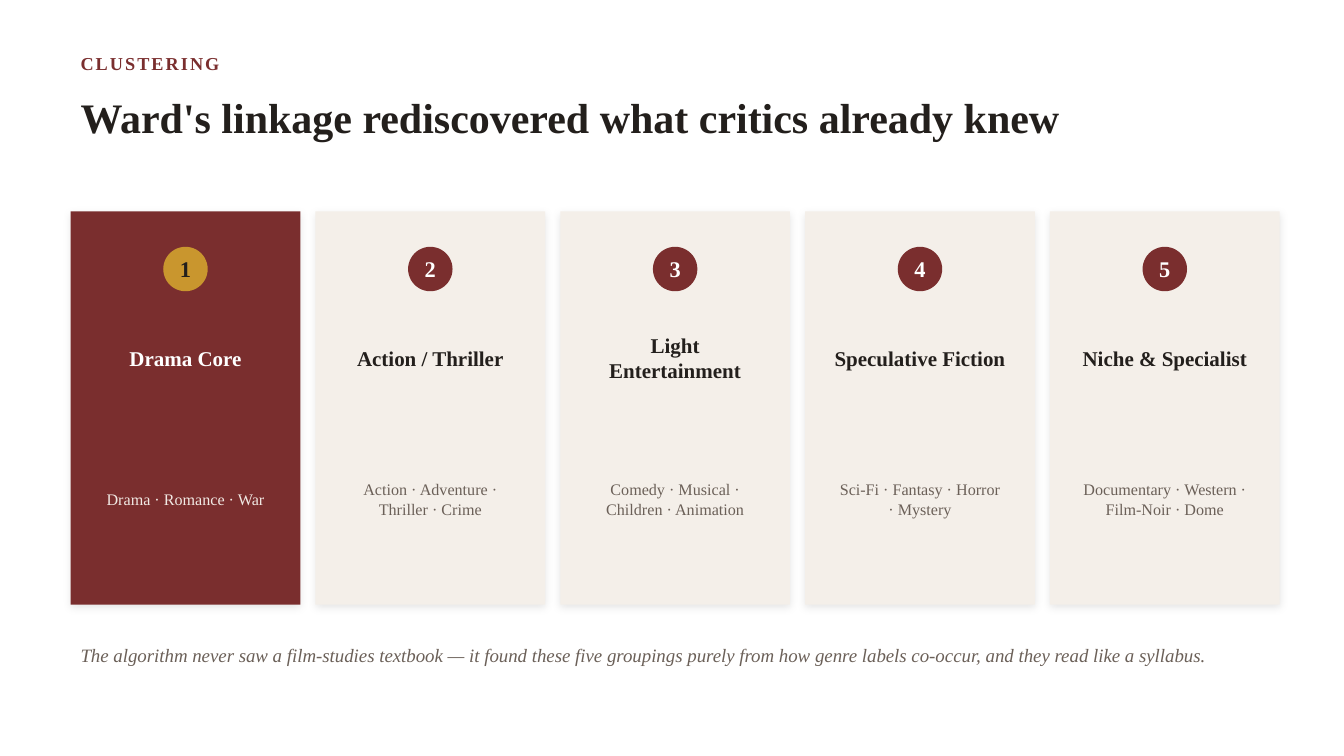
"""Build the slide on five genre clusters found by Ward's linkage."""
from lxml import etree
from pptx import Presentation
from pptx.dml.color import RGBColor
from pptx.enum.shapes import MSO_SHAPE
from pptx.enum.text import MSO_ANCHOR, PP_ALIGN
from pptx.oxml.ns import qn
from pptx.util import Cm, Pt

RECT, OVAL = MSO_SHAPE.RECTANGLE, MSO_SHAPE.OVAL
LEFT, CENTER = PP_ALIGN.LEFT, PP_ALIGN.CENTER
MIDDLE = MSO_ANCHOR.MIDDLE
FONT = "Times New Roman"
COLORS = {"wine": "7A2E2E", "gold": "C9962E", "cream": "F4EFE9", "ink": "231F1C",
          "gray": "6B6058", "blush": "F1E9E4", "white": "FFFFFF"}
EDGE, TOP, WIDE, HIGH, STEP, DOT = 1.78, 5.33, 5.79, 9.91, 6.17, 1.12
GROUPS = [
    ("Drama Core", "Drama · Romance · War"),
    ("Action / Thriller", "Action · Adventure · Thriller · Crime"),
    ("Light Entertainment", "Comedy · Musical · Children · Animation"),
    ("Speculative Fiction", "Sci-Fi · Fantasy · Horror · Mystery"),
    ("Niche & Specialist", "Documentary · Western · Film-Noir · Dome"),
]


def paint(name):
    """Return the named colour."""
    return RGBColor.from_string(COLORS[name])


def write(shape, text, size, color, align=LEFT, bold=False, italic=False):
    """Put one styled paragraph in a shape and return its run."""
    frame = shape.text_frame
    frame.text = text
    frame.word_wrap = True
    frame.vertical_anchor = MIDDLE
    para = frame.paragraphs[0]
    para.alignment = align
    run = para.runs[0]
    font = run.font
    font.name, font.size = FONT, Pt(size)
    font.bold, font.italic = bold, italic
    font.color.rgb = paint(color)
    return run


def add_text(slide, box, *args, **style):
    """Add a text box and return its run."""
    shape = slide.shapes.add_textbox(*map(Cm, box))
    return write(shape, *args, **style)


def add_shape(slide, kind, box, color):
    """Add a plain filled shape."""
    shape = slide.shapes.add_shape(kind, *map(Cm, box))
    shape.shadow.inherit = False
    shape.fill.solid()
    shape.fill.fore_color.rgb = paint(color)
    shape.line.fill.background()
    return shape


def add_shade(shape):
    """Give a shape a soft shadow below it."""
    effects = shape._element.spPr.find(qn("a:effectLst"))
    shade = etree.SubElement(effects, qn("a:outerShdw"), blurRad=str(Pt(6)),
                             dist=str(Pt(2)), dir="5400000", algn="bl", rotWithShape="0")
    tint = etree.SubElement(shade, qn("a:srgbClr"), val="000000")
    etree.SubElement(tint, qn("a:alpha"), val="10000")


def add_card(slide, index, title, genres):
    """Add one cluster card, the first one in strong colours."""
    first = index == 0
    left = EDGE + index * STEP
    card = add_shape(slide, RECT, (left, TOP, WIDE, HIGH), "wine" if first else "cream")
    add_shade(card)
    dot = add_shape(slide, OVAL, (left + (WIDE - DOT) / 2, 6.22, DOT, DOT),
                    "gold" if first else "wine")
    frame = dot.text_frame
    frame.margin_left = frame.margin_right = frame.margin_top = frame.margin_bottom = 0
    write(dot, str(index + 1), 16, "ink" if first else "white", CENTER, bold=True)
    add_text(slide, (left + 0.38, 7.87, WIDE - 0.76, 2.29), title, 15,
             "white" if first else "ink", CENTER, bold=True)
    add_text(slide, (left + 0.51, 10.29, WIDE - 1.02, 4.57), genres, 11.5,
             "blush" if first else "gray", CENTER)


def main():
    """Build and save the slide."""
    deck = Presentation()
    deck.slide_width, deck.slide_height = Cm(33.87), Cm(19.05)
    slide = deck.slides.add_slide(deck.slide_layouts[6])
    label = add_text(slide, (EDGE, 1.14, 25.4, 0.89), "CLUSTERING", 13, "wine", bold=True)
    label.font._element.set("spc", "150")
    add_text(slide, (EDGE, 1.98, 30.23, 1.91),
             "Ward's linkage rediscovered what critics already knew", 30, "ink", bold=True)
    for index, (title, genres) in enumerate(GROUPS):
        add_card(slide, index, title, genres)
    add_text(slide, (EDGE, 15.75, 29.21, 1.52),
             "The algorithm never saw a film-studies textbook — it found these five groupings "
             "purely from how genre labels co-occur, and they read like a syllabus.",
             13.5, "gray", italic=True)
    deck.save("out.pptx")


if __name__ == "__main__":
    main()
